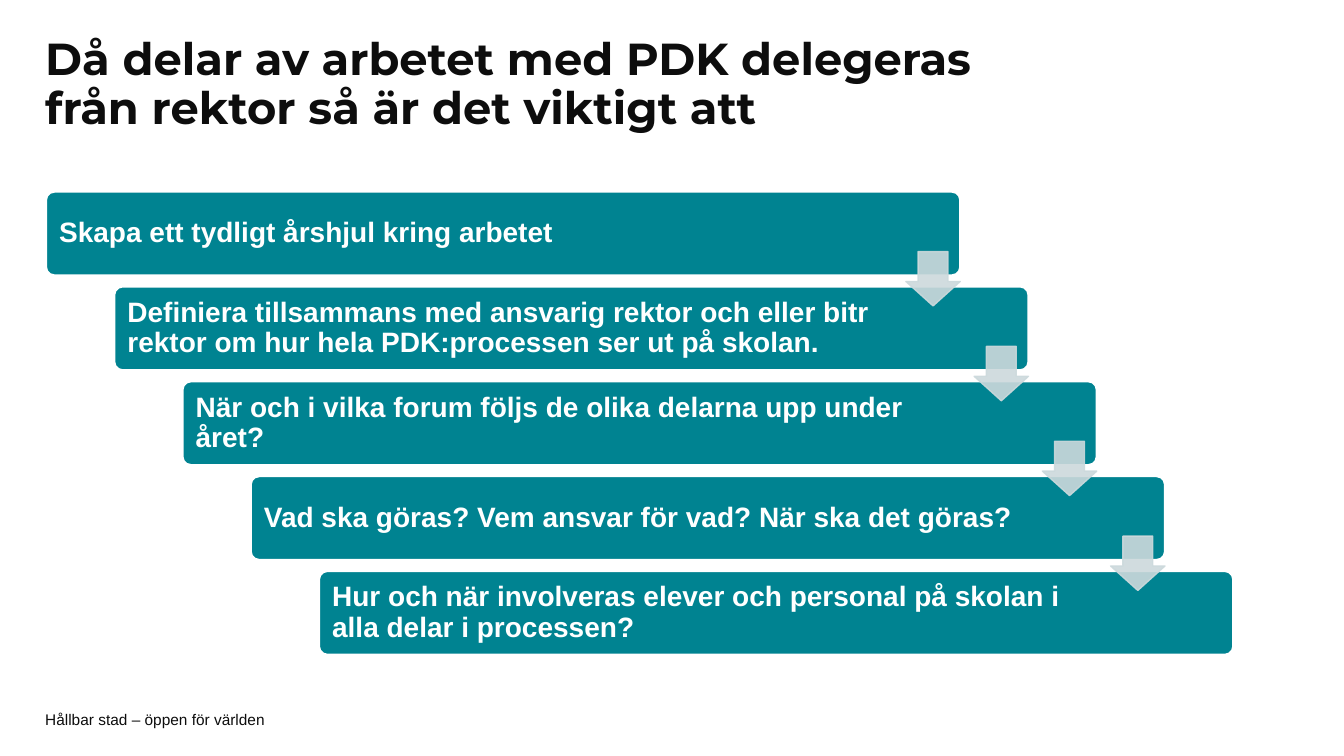
from dataclasses import dataclass

from lxml.etree import SubElement
from pptx import Presentation
from pptx.dml.color import RGBColor
from pptx.enum.shapes import MSO_SHAPE
from pptx.enum.text import MSO_ANCHOR, MSO_AUTO_SIZE, PP_ALIGN
from pptx.oxml.ns import qn
from pptx.util import Cm, Pt


@dataclass(frozen=True)
class Theme:
    ink: RGBColor = RGBColor(0x0D, 0x0D, 0x0D)
    white: RGBColor = RGBColor(0xFF, 0xFF, 0xFF)
    teal: RGBColor = RGBColor(0x00, 0x83, 0x91)
    mist: RGBColor = RGBColor(0xCC, 0xD9, 0xDC)
    heading_font: str = "Montserrat"
    body_font: str = "Arial"
    title_size: int = 32
    step_size: int = 20
    footer_size: int = 11


THEME = Theme()

TITLE = "Då delar av arbetet med PDK delegeras från rektor så är det viktigt att"
FOOTER = "Hållbar stad – öppen för världen"
STEPS = [
    "Skapa ett tydligt årshjul kring arbetet",
    "Definiera tillsammans med ansvarig rektor och eller bitr rektor om hur "
    "hela PDK:processen ser ut på skolan.",
    "När och i vilka forum följs de olika delarna upp under året?",
    "Vad ska göras? Vem ansvar för vad? När ska det göras?",
    "Hur och när involveras elever och personal på skolan i alla delar i processen?",
]


def write_text(shape, text, *, size, color, font=THEME.body_font, bold=False,
               line_spacing=1.0, insets=(0, 0, 0, 0)):
    """Fill a shape with one left-aligned paragraph; insets are left, top, right, bottom."""
    frame = shape.text_frame
    frame.word_wrap = True
    frame.auto_size = MSO_AUTO_SIZE.NONE
    frame.vertical_anchor = MSO_ANCHOR.MIDDLE
    frame.margin_left, frame.margin_top, frame.margin_right, frame.margin_bottom = insets
    para = frame.paragraphs[0]
    para.alignment = PP_ALIGN.LEFT
    para.line_spacing = line_spacing
    span = para.add_run()
    span.text = text
    span.font.name = font
    span.font.size = Pt(size)
    span.font.bold = bold
    span.font.color.rgb = color


def add_block(page, kind, box, adjustments, fill, line, line_width):
    shape = page.shapes.add_shape(kind, *box)
    shape.shadow.inherit = False
    for index, value in enumerate(adjustments):
        shape.adjustments[index] = value
    shape.fill.solid()
    shape.fill.fore_color.rgb = fill
    shape.line.color.rgb = line
    shape.line.width = Pt(line_width)
    return shape


def set_opacity(shape, percent):
    for color in shape.element.spPr.iter(qn("a:srgbClr")):
        SubElement(color, qn("a:alpha")).set("val", str(percent * 1000))


def add_title(page, box):
    title = page.shapes.title
    title.left, title.top, title.width, title.height = box
    write_text(title, TITLE, size=THEME.title_size, color=THEME.ink,
               font=THEME.heading_font, bold=True, line_spacing=0.9,
               insets=(0, Cm(0.13), 0, Cm(0.13)))


def add_staircase(page, box):
    left, top, width, height = box
    step_width, step_height = Cm(23.04), Cm(2.11)
    gaps = len(STEPS) - 1
    shift, drop = (width - step_width) // gaps, (height - step_height) // gaps
    arrow_size = Cm(1.37)

    # Steps
    for index, text in enumerate(STEPS):
        step = add_block(page, MSO_SHAPE.ROUNDED_RECTANGLE,
                         (left + index * shift, top + index * drop, step_width, step_height),
                         [0.1], THEME.teal, THEME.white, 1.5)
        write_text(step, text, size=THEME.step_size, color=THEME.white, bold=True,
                   line_spacing=0.9, insets=(Cm(0.27), Cm(0.27), Cm(3.34), Cm(0.27)))

    # Arrows, flush with the right edge of the step they leave
    for index in range(gaps):
        arrow = add_block(page, MSO_SHAPE.DOWN_ARROW,
                          (left + index * shift + step_width - arrow_size,
                           top + index * drop + Cm(1.51), arrow_size, arrow_size),
                          [0.55, 0.45], THEME.mist, THEME.mist, 1)
        set_opacity(arrow, 90)


def add_footer(page, box):
    footer = page.shapes.add_textbox(*box)
    write_text(footer, FOOTER, size=THEME.footer_size, color=THEME.ink)


def main():
    deck = Presentation()
    deck.slide_width, deck.slide_height = Cm(33.87), Cm(19.05)
    page = deck.slides.add_slide(deck.slide_layouts[5])
    add_title(page, (Cm(1.14), Cm(1.12), Cm(25.48), Cm(2.06)))
    add_staircase(page, (Cm(1.16), Cm(4.83), Cm(29.92), Cm(11.67)))
    add_footer(page, (Cm(1.14), Cm(17.93), Cm(24), Cm(0.41)))
    deck.save("out.pptx")


if __name__ == "__main__":
    main()
